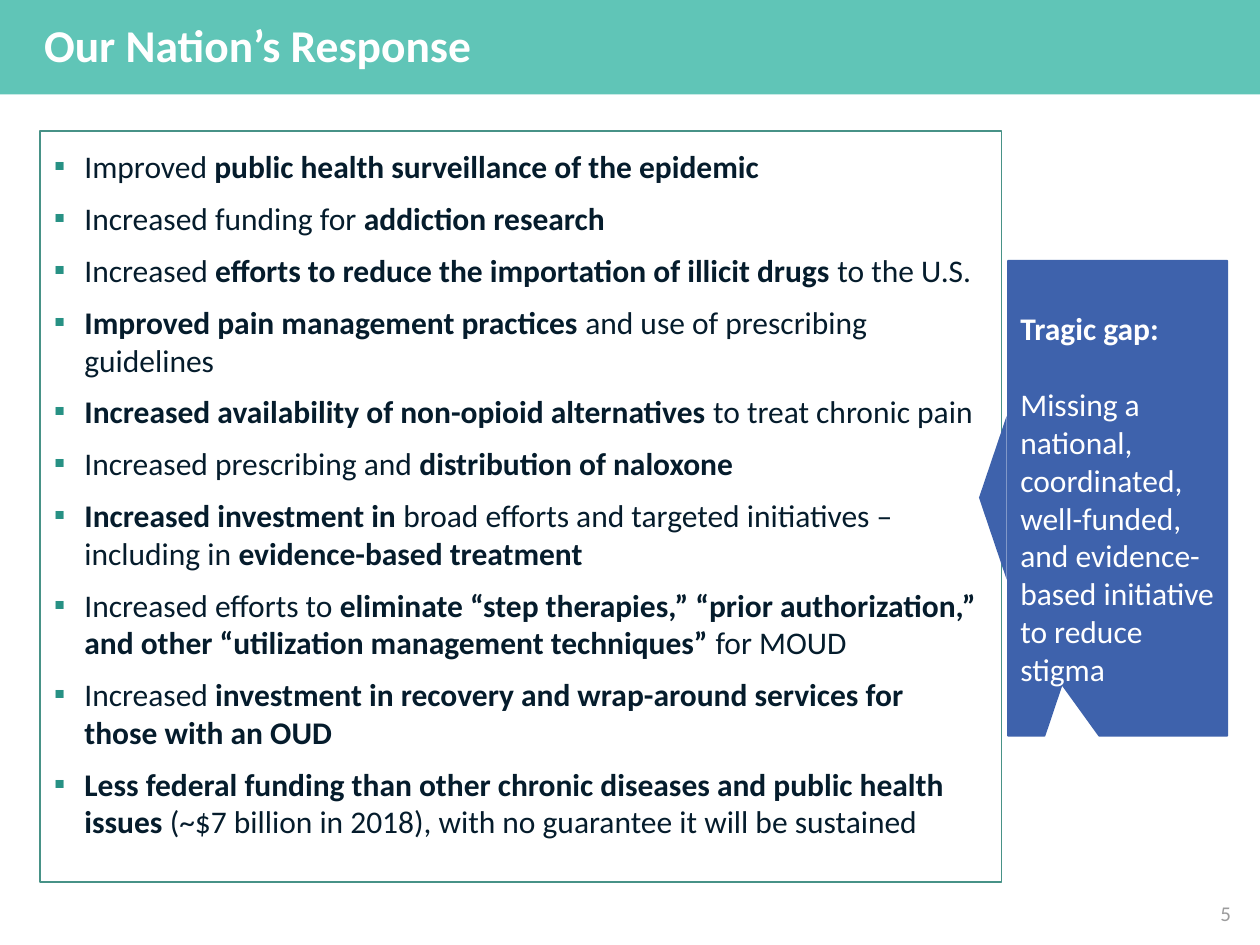
from lxml.etree import SubElement
from pptx import Presentation
from pptx.dml.color import RGBColor
from pptx.enum.shapes import MSO_SHAPE
from pptx.enum.text import MSO_ANCHOR, PP_ALIGN
from pptx.oxml.ns import qn
from pptx.util import Inches, Pt

COLORS = {"teal": "60C5B7", "bullet": "279184", "frame": "479287",
          "blue": "3E62AC", "ink": "051C2C", "gray": "9C9C9D", "white": "FFFFFF"}
FONT = "Calibri"
WIDTH, HEIGHT = 10, 7.5

# Text between ** marks is bold.
TITLE = "**Our Nation’s Response**"
RESPONSES = [
    "Improved **public health surveillance of the epidemic**",
    "Increased funding for **addiction research**",
    "Increased **efforts to reduce the importation of illicit drugs **to the U.S.",
    "**Improved pain management practices **and use of prescribing guidelines",
    "**Increased availability of non-opioid alternatives **to treat chronic pain",
    "Increased prescribing and **distribution of naloxone**",
    "**Increased investment in **broad efforts and targeted initiatives – "
    "including in **evidence-based treatment**",
    "Increased efforts to **eliminate “step therapies,” “prior authorization,” "
    "and other “utilization management techniques” **for MOUD",
    "Increased **investment in recovery and wrap-around services for those with an OUD**",
    "**Less federal funding than other chronic diseases and public health issues **"
    "(~$7 billion in 2018), with no guarantee it will be sustained",
]
GAP = ["**Tragic gap:**",
       "Missing a national, coordinated, well-funded, and evidence-based "
       "initiative to reduce stigma"]
PAGE = "5"

# Left, top, width, height as shares of the slide
AREAS = {
    "title": (0, 0, 1, 0.1),
    "responses": (0.043, 0.156, 0.738, 0.792),
    "frame": (0.032, 0.1387, 0.763, 0.7947),
    "pointer": (0.723, 0.512, 0.13, 0.0293),
    "gap": (0.8, 0.276, 0.174, 0.5027),
    "page": (0.759, 0.9467, 0.225, 0.04),
}


def rgb(name):
    return RGBColor.from_string(COLORS[name])


def area(name):
    return [Inches(share * side)
            for share, side in zip(AREAS[name], (WIDTH, HEIGHT) * 2)]


def add_block(slide, preset, name, fill=None, line=None):
    block = slide.shapes.add_shape(preset, *area(name))
    block.shadow.inherit = False
    if fill:
        block.fill.solid()
        block.fill.fore_color.rgb = rgb(fill)
    else:
        block.fill.background()
    if line:
        block.line.color.rgb = rgb(line)
        block.line.width = Pt(1)
    else:
        block.line.fill.background()
    return block


def write(shape, lines, size, color, frame_format, paragraph_format):
    """Fill a shape with one paragraph per line, bold between ** marks."""
    frame = shape.text_frame
    for key, value in {"word_wrap": True, **frame_format}.items():
        setattr(frame, key, value)
    for index, line in enumerate(lines):
        paragraph = frame.add_paragraph() if index else frame.paragraphs[0]
        for key, value in {"alignment": PP_ALIGN.LEFT, **paragraph_format}.items():
            setattr(paragraph, key, value)
        for part, words in enumerate(line.split("**")):
            if words:
                run = paragraph.add_run()
                run.text = words
                font = {"name": FONT, "size": Pt(size), "bold": part % 2 == 1}
                for key, value in font.items():
                    setattr(run.font, key, value)
                run.font.color.rgb = rgb(color)
    return frame.paragraphs


def add_bullet(paragraph, indent):
    properties = paragraph._p.get_or_add_pPr()
    properties.set("marL", str(Inches(indent)))
    properties.set("indent", str(Inches(-indent)))
    bullet_color = SubElement(properties, qn("a:buClr"))
    SubElement(bullet_color, qn("a:srgbClr"), val=COLORS["bullet"])
    SubElement(properties, qn("a:buFont"), typeface=FONT)
    SubElement(properties, qn("a:buChar"), char="▪")


def margins(side, end):
    return {"margin_left": Inches(side), "margin_right": Inches(side),
            "margin_top": Inches(end), "margin_bottom": Inches(end)}


def main():
    deck = Presentation()
    deck.slide_width, deck.slide_height = Inches(WIDTH), Inches(HEIGHT)
    slide = deck.slides.add_slide(deck.slide_layouts[6])
    middle = {"vertical_anchor": MSO_ANCHOR.MIDDLE}

    title = add_block(slide, MSO_SHAPE.RECTANGLE, "title", fill="teal")
    write(title, [TITLE], 26, "white",
          {**middle, "margin_left": Inches(0.35)}, {"line_spacing": 0.9})

    responses = slide.shapes.add_textbox(*area("responses"))
    for paragraph in write(responses, RESPONSES, 18, "ink",
                           margins(0, 0), {"space_before": Pt(8)}):
        add_bullet(paragraph, 0.24)
    add_block(slide, MSO_SHAPE.RECTANGLE, "frame", line="frame")

    pointer = add_block(slide, MSO_SHAPE.ISOSCELES_TRIANGLE, "pointer", fill="blue")
    pointer.rotation = 270

    gap = add_block(slide, MSO_SHAPE.RECTANGULAR_CALLOUT, "gap", "blue", "blue")
    gap.adjustments[0], gap.adjustments[1] = -0.254, 0.391
    heading, _ = write(gap, GAP, 18, "white", middle, {})
    heading.space_after = Pt(22)

    page = slide.shapes.add_textbox(*area("page"))
    write(page, [PAGE], 12, "gray",
          {**middle, **margins(0.07, 0.04)}, {"alignment": PP_ALIGN.RIGHT})

    deck.save("out.pptx")


if __name__ == "__main__":
    main()
